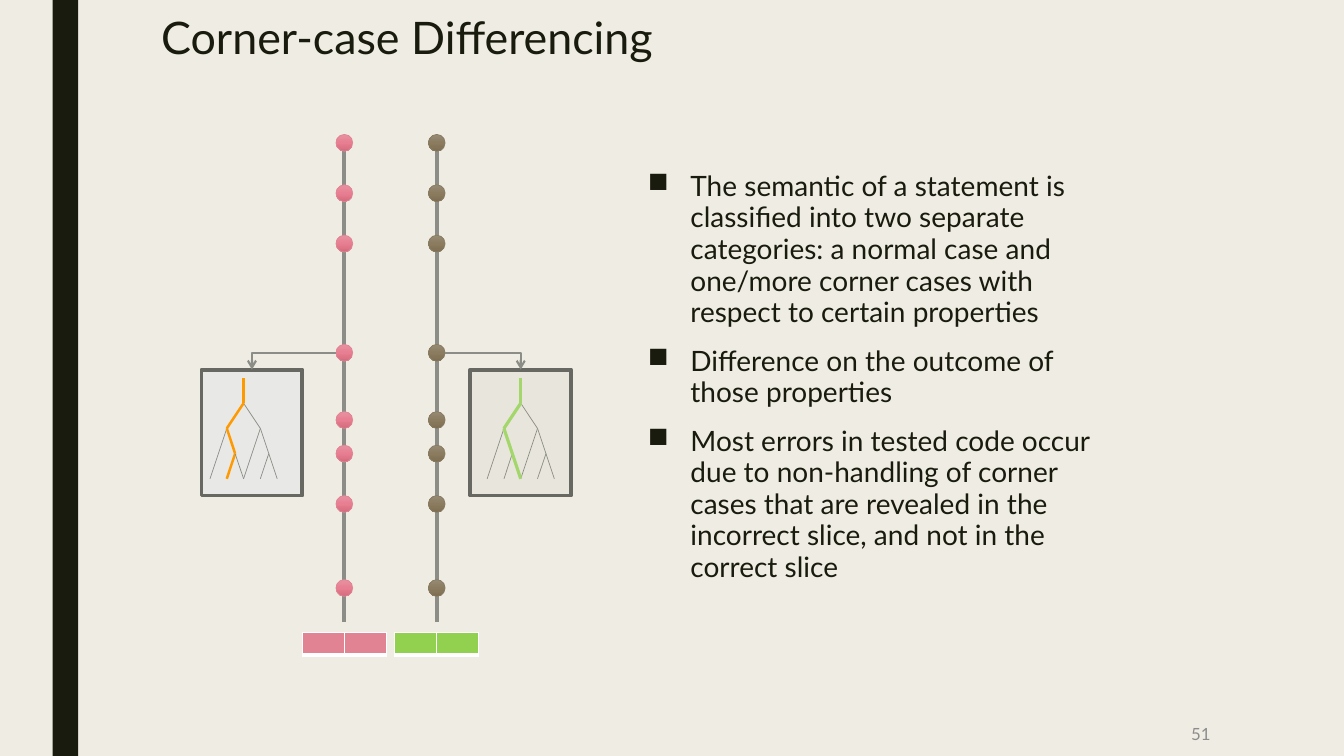
"""Build the Corner-case Differencing slide."""
from copy import deepcopy

from lxml import etree
from pptx import Presentation
from pptx.dml.color import RGBColor
from pptx.enum.shapes import MSO_CONNECTOR, MSO_SHAPE
from pptx.enum.text import MSO_ANCHOR, PP_ALIGN
from pptx.oxml.ns import qn
from pptx.util import Cm, Pt

STRAIGHT, ELBOW = MSO_CONNECTOR.STRAIGHT, MSO_CONNECTOR.ELBOW
RECTANGLE, OVAL = MSO_SHAPE.RECTANGLE, MSO_SHAPE.OVAL
TOP, MIDDLE = MSO_ANCHOR.TOP, MSO_ANCHOR.MIDDLE
LEFT, RIGHT = PP_ALIGN.LEFT, PP_ALIGN.RIGHT

CREAM = RGBColor(0xEF, 0xED, 0xE3)
INK = RGBColor(0x19, 0x1B, 0x0E)
PAGE_GRAY = RGBColor(0x8C, 0x8C, 0x8C)
LINE_GRAY = RGBColor(0x8C, 0x8D, 0x86)
FRAME_GRAY = RGBColor(0x68, 0x68, 0x63)
PALE_GRAY = RGBColor(0xE8, 0xE8, 0xE7)
ORANGE = RGBColor(0xFF, 0x99, 0x00)
LEAF = RGBColor(0xA4, 0xD7, 0x6B)
GREEN = RGBColor(0x92, 0xD0, 0x50)
PINK = RGBColor(0xE2, 0x83, 0x94)
BROWN = RGBColor(0x89, 0x7B, 0x61)
PINK_SHADES = (RGBColor(0xE7, 0x93, 0xA2), RGBColor(0xE7, 0x7E, 0x91),
               RGBColor(0xD3, 0x6B, 0x7D))
BROWN_SHADES = (RGBColor(0x97, 0x8B, 0x76), RGBColor(0x8B, 0x7C, 0x5F),
                RGBColor(0x7D, 0x6E, 0x53))

FONT = "Lato"
STEPS_PER_INCH = 12
STATEMENT_ROWS = (17, 23, 29, 42, 50, 54, 60, 70)
TAKEN_BRANCHES = ((0, 0, 0, 3), (0, 3, -2, 6), (-2, 6, -1, 9))
OTHER_BRANCHES = ((0, 3, 2, 6), (-2, 6, -4, 12), (2, 6, 0, 12),
                  (2, 6, 3, 9), (3, 9, 2, 12), (3, 9, 4, 12))
LAST_BRANCHES = ((-1, 9, -2, 12), (-1, 9, 0, 12))
POINTS = (
    "The semantic of a statement is classified into two separate categories: "
    "a normal case and one/more corner cases with respect to certain properties",
    "Difference on the outcome of those properties",
    "Most errors in tested code occur due to non-handling of corner cases "
    "that are revealed in the incorrect slice, and not in the correct slice",
)


def grid(steps):
    """Convert diagram grid steps to a length."""
    return Cm(steps * 2.54 / STEPS_PER_INCH)


def add_text(slide, box, lines, size, color, align=LEFT, anchor=TOP, spacing=1.0):
    """Add wrapped text, one paragraph per line, and return its frame."""
    frame = slide.shapes.add_textbox(*map(Cm, box)).text_frame
    frame.word_wrap = True
    frame.vertical_anchor = anchor
    frame.text = "\n".join(lines)
    for paragraph in frame.paragraphs:
        paragraph.alignment = align
        paragraph.line_spacing = spacing
        for run in paragraph.runs:
            run.font.name = FONT
            run.font.size = Pt(size)
            run.font.color.rgb = color
    return frame


def add_points(slide):
    """Add the square-bulleted explanation."""
    frame = add_text(slide, (16.08, 2.97, 12.27, 14.05), POINTS, 20, INK, spacing=0.94)
    frame.margin_top = Cm(1.34)
    for paragraph in frame.paragraphs:
        paragraph.space_before = Pt(10)
        paragraph.space_after = Pt(2)
        properties = paragraph._p.get_or_add_pPr()
        properties.set("marL", str(Cm(1.07)))
        properties.set("indent", str(-Cm(1.07)))
        etree.SubElement(properties, qn("a:buChar"), char="■")


def add_line(slide, ends, color, width, kind=STRAIGHT):
    """Add a connector between two grid points."""
    line = slide.shapes.add_connector(kind, *map(grid, ends))
    line.line.color.rgb = color
    line.line.width = Pt(width)
    etree.SubElement(line._element.spPr, qn("a:effectLst"))
    return line


def add_arrow(slide, ends):
    """Add a one-bend arrow from a statement to its tree."""
    arrow = add_line(slide, ends, LINE_GRAY, 1.5, ELBOW)
    arrow._element.spPr.find(qn("a:prstGeom")).set("prst", "bentConnector2")
    etree.SubElement(arrow.line._get_or_add_ln(), qn("a:tailEnd"), type="arrow")


def add_outlined(slide, kind, box, color, width):
    """Add a shape on the grid with an outline and no shadow."""
    shape = slide.shapes.add_shape(kind, *map(grid, box))
    shape.shadow.inherit = False
    shape.line.color.rgb = color
    shape.line.width = Pt(width)
    return shape


def add_statement(slide, x, y, shades, outline):
    """Add a gradient dot centred on a grid point."""
    dot = add_outlined(slide, OVAL, (x - 1, y - 1, 2, 2), outline, 0.5)
    dot.fill.gradient()
    dot.fill.gradient_angle = 270
    stop_list = dot._element.spPr.find(".//" + qn("a:gsLst"))
    stop_list.insert(1, deepcopy(stop_list[0]))
    for index, (stop, shade) in enumerate(zip(dot.fill.gradient_stops, shades)):
        stop.position = index / 2
        stop.color.rgb = shade


def add_slice(slide, x, shades, outline):
    """Add a vertical slice with its statements."""
    add_line(slide, (x, 18, x, 74), LINE_GRAY, 2.75)
    for y in STATEMENT_ROWS:
        add_statement(slide, x, y, shades, outline)


def add_tree(slide, box_left, root, taken, color, width, fill, alpha=100):
    """Add a framed execution tree with its taken branches highlighted."""
    frame = add_outlined(slide, RECTANGLE, (box_left, 44, 12, 15), FRAME_GRAY, 2.75)
    frame.fill.solid()
    frame.fill.fore_color.rgb = fill
    if alpha < 100:
        fill_color = frame._element.spPr.find(qn("a:solidFill"))[0]
        etree.SubElement(fill_color, qn("a:alpha"), val=str(alpha * 1000))
    for branch in OTHER_BRANCHES + LAST_BRANCHES + TAKEN_BRANCHES:
        highlighted = branch in TAKEN_BRANCHES or branch == taken
        x1, y1, x2, y2 = branch
        add_line(slide, (root + x1, 45 + y1, root + x2, 45 + y2),
                 color if highlighted else LINE_GRAY, width if highlighted else 0.5)


def add_outcome(slide, left, color):
    """Add the two-cell outcome table below a slice."""
    table = slide.shapes.add_table(1, 2, *map(grid, (left, 75.25, 10, 2.75))).table
    for cell in table.iter_cells():
        cell.margin_top = cell.margin_bottom = 0
        etree.SubElement(cell.text_frame.paragraphs[0]._p, qn("a:endParaRPr"), sz="600")
        properties = cell._tc.get_or_add_tcPr()
        for side, width in (("L", 1), ("R", 1), ("T", 1), ("B", 3)):
            border = etree.SubElement(properties, qn(f"a:ln{side}"), w=str(Pt(width)))
            paint = etree.SubElement(border, qn("a:solidFill"))
            etree.SubElement(paint, qn("a:srgbClr"), val="FFFFFF")
        cell.fill.solid()
        cell.fill.fore_color.rgb = color


def main():
    """Assemble and save the slide."""
    deck = Presentation()
    deck.slide_width, deck.slide_height = Cm(33.87), Cm(19.05)
    slide = deck.slides.add_slide(deck.slide_layouts[6])
    slide.background.fill.solid()
    slide.background.fill.fore_color.rgb = CREAM

    stripe = slide.shapes.add_shape(RECTANGLE, Cm(1.33), 0, Cm(0.64), Cm(19.05))
    stripe.shadow.inherit = False
    stripe.fill.solid()
    stripe.fill.fore_color.rgb = INK
    stripe.line.fill.background()

    add_text(slide, (3.81, 0.28, 26.67, 2.46), ["Corner-case Differencing"],
             32, INK, spacing=0.89)
    add_points(slide)
    add_text(slide, (26.31, 17.93, 4.45, 1.12), ["51"], 12, PAGE_GRAY, RIGHT, MIDDLE)

    add_slice(slide, 41, PINK_SHADES, PINK)
    add_slice(slide, 52, BROWN_SHADES, BROWN)
    add_outcome(slide, 36, PINK)
    add_outcome(slide, 47, GREEN)
    add_tree(slide, 24, 29, LAST_BRANCHES[0], ORANGE, 1.75, PALE_GRAY)
    add_tree(slide, 56, 62, LAST_BRANCHES[1], LEAF, 2.25, LINE_GRAY, 7)
    add_arrow(slide, (40, 42, 30, 44))
    add_arrow(slide, (53, 42, 62, 44))
    deck.save("out.pptx")


if __name__ == "__main__":
    main()
